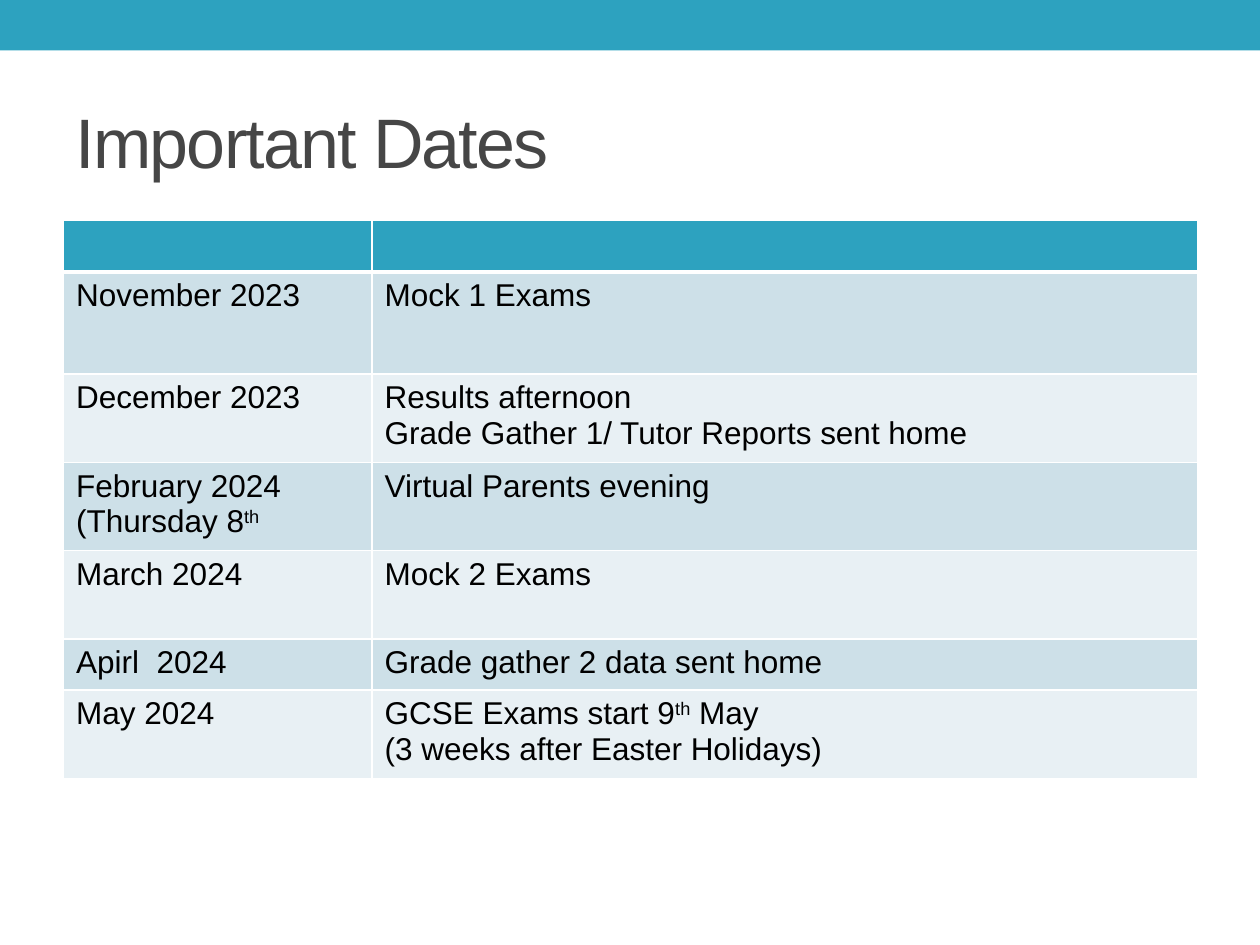
import lxml.etree
import pptx
import pptx.dml.color
import pptx.enum.shapes
import pptx.enum.text
import pptx.oxml.ns
import pptx.util
from pptx.util import Cm, Pt

RGBColor = pptx.dml.color.RGBColor
TEAL = RGBColor(0x2D, 0xA2, 0xBF)
GREY = RGBColor(0x46, 0x46, 0x46)
BLACK = RGBColor(0, 0, 0)
WHITE = RGBColor(0xFF, 0xFF, 0xFF)
BANDS = (RGBColor(0xCD, 0xE0, 0xE8), RGBColor(0xE8, 0xF0, 0xF4))
FONT = "Arial"

COL_WIDTHS = (6.22, 16.64)
HEADER_HEIGHT = 1.03
DATES = [
    (2.06, "November 2023", "Mock 1 Exams"),
    (1.78, "December 2023",
     "Results afternoon\nGrade Gather 1/ Tutor Reports sent home"),
    (1.78, "February 2024\n(Thursday 8^th", "Virtual Parents evening"),
    (1.78, "March 2024", "Mock 2 Exams"),
    (1.03, "Apirl  2024", "Grade gather 2 data sent home"),
    (1.78, "May 2024",
     "GCSE Exams start 9^th^ May\n(3 weeks after Easter Holidays)"),
]


def style_run(r, size, color):
    r.font.name = FONT
    r.font.size = Pt(size)
    r.font.color.rgb = color


def add_banner(s, left, top, width, height):
    sp = s.shapes.add_shape(pptx.enum.shapes.MSO_SHAPE.RECTANGLE,
                            left, top, width, height)
    sp.shadow.inherit = False
    sp.fill.solid()
    sp.fill.fore_color.rgb = TEAL
    sp.line.fill.background()


def place_title(s, text, left, top, width, height):
    sp = s.shapes.title
    sp.left, sp.top, sp.width, sp.height = left, top, width, height
    tf = sp.text_frame
    tf.text = text
    tf.vertical_anchor = pptx.enum.text.MSO_ANCHOR.MIDDLE
    p = tf.paragraphs[0]
    p.alignment = pptx.enum.text.PP_ALIGN.LEFT
    r = p.runs[0]
    style_run(r, 40, GREY)
    r.font._element.set("spc", "-100")


def set_borders(cell, top, bottom):
    tcPr = cell._tc.get_or_add_tcPr()
    for side, width in (("L", 1), ("R", 1), ("T", top), ("B", bottom)):
        ln = lxml.etree.SubElement(tcPr, pptx.oxml.ns.qn(f"a:ln{side}"),
                                   w=str(Pt(width)))
        fill = lxml.etree.SubElement(ln, pptx.oxml.ns.qn("a:solidFill"))
        lxml.etree.SubElement(fill, pptx.oxml.ns.qn("a:srgbClr"),
                              val=str(WHITE))


def write_cell(cell, text):
    tf = cell.text_frame
    tf.text = text
    for p, line in zip(tf.paragraphs, text.split("\n")):
        p.text = ""
        for i, part in enumerate(line.split("^")):
            r = p.add_run()
            r.text = part
            style_run(r, 18, BLACK)
            if i % 2:
                r.font._element.set("baseline", "30000")


def add_dates_table(s, left, top):
    rows = [(HEADER_HEIGHT, "", "")] + DATES
    height = sum(row[0] for row in rows)
    table = s.shapes.add_table(len(rows), len(COL_WIDTHS), left, top,
                               Cm(sum(COL_WIDTHS)), Cm(height)).table
    for column, width in zip(table.columns, COL_WIDTHS):
        column.width = Cm(width)
    for i, (row_height, *texts) in enumerate(rows):
        table.rows[i].height = Cm(row_height)
        for j, text in enumerate(texts):
            cell = table.cell(i, j)
            set_borders(cell, 3 if i == 1 else 1, 3 if i == 0 else 1)
            cell.fill.solid()
            cell.fill.fore_color.rgb = BANDS[(i - 1) % 2] if i else TEAL
            if text:
                write_cell(cell, text)


def main():
    prs = pptx.Presentation()
    prs.slide_width, prs.slide_height = Cm(25.4), Cm(19.05)
    s = prs.slides.add_slide(prs.slide_layouts[5])
    add_banner(s, 0, 0, prs.slide_width, Cm(1.02))
    place_title(s, "Important Dates", Cm(1.27), Cm(1.47), Cm(22.86), Cm(2.74))
    add_dates_table(s, Cm(1.28), Cm(4.45))
    prs.save("out.pptx")


if __name__ == "__main__":
    main()
